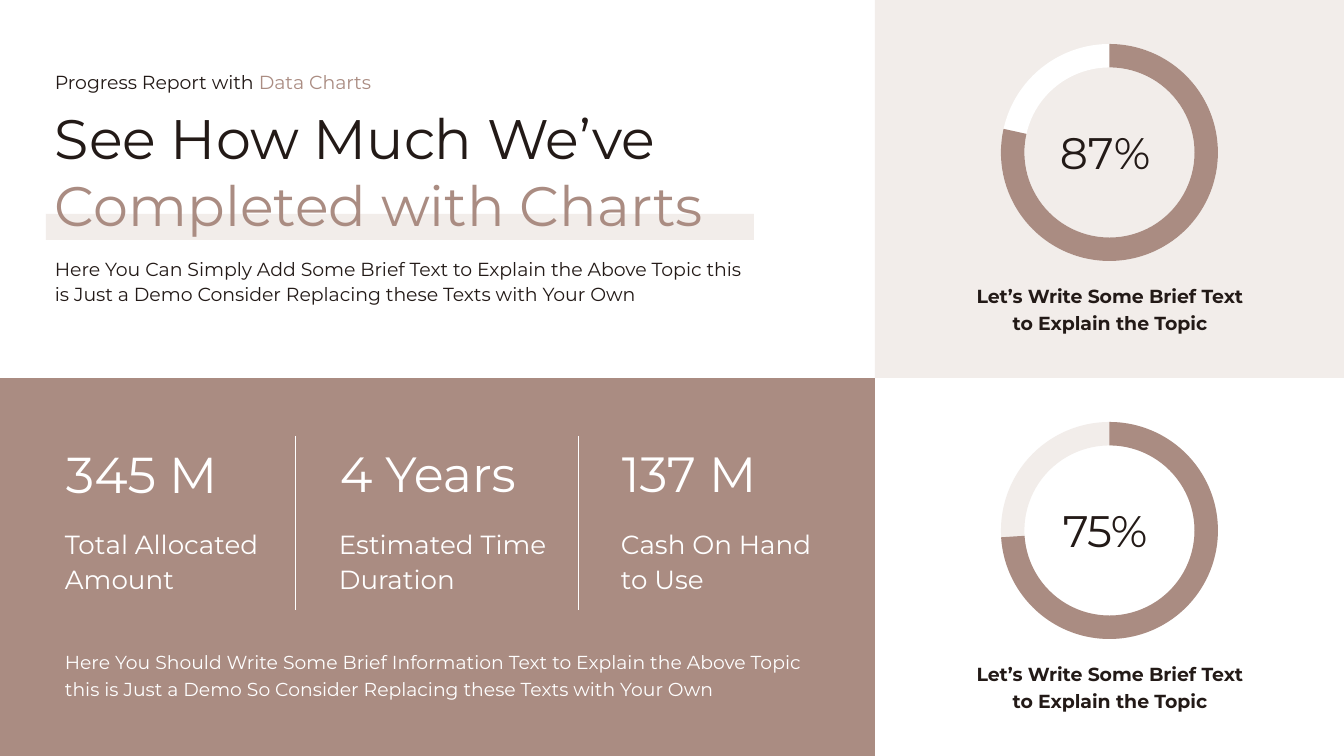
from dataclasses import dataclass

from lxml.etree import SubElement
from pptx import Presentation
from pptx.dml.color import RGBColor
from pptx.enum.shapes import MSO_CONNECTOR, MSO_SHAPE
from pptx.enum.text import MSO_AUTO_SIZE, PP_ALIGN
from pptx.oxml.ns import qn
from pptx.util import Emu, Pt

WIDTH, HEIGHT = 1344, 756
EMU_PER_PX = 12192000 / WIDTH


@dataclass(frozen=True)
class Theme:
    font: str = "Montserrat"
    ink: str = "231A17"
    clay: str = "AA8C82"
    sand: str = "F2EDEA"
    white: str = "FFFFFF"
    title: float = 39.75
    figure: float = 35.25
    lead_figure: float = 36
    percent: float = 31.5
    label: float = 18.75
    body: float = 13.5
    footer: float = 13.4


def px(length):
    return Emu(round(length * EMU_PER_PX))


class SlideBuilder:
    def __init__(self, slide, theme):
        self.shapes = slide.shapes
        self.theme = theme

    def block(self, kind, left, top, width, height, color, parent=None):
        shape = (parent or self.shapes).add_shape(
            kind, px(left), px(top), px(width), px(height))
        shape.shadow.inherit = False
        shape.fill.solid()
        shape.fill.fore_color.rgb = RGBColor.from_string(color)
        shape.line.fill.background()
        return shape

    def panel(self, left, top, width, height, color):
        self.block(MSO_SHAPE.RECTANGLE, left, top, width, height, color)

    def ring(self, left, top, size, end_angle, track_color):
        group = self.shapes.add_group_shape().shapes
        thickness = 0.108
        track = self.block(MSO_SHAPE.DONUT, left, top, size, size, track_color, group)
        track.adjustments[0] = thickness
        progress = self.block(MSO_SHAPE.BLOCK_ARC, left, top, size, size,
                              self.theme.clay, group)
        # Angles are stored in 1/60000 degree, adjustments in 1/100000
        progress.adjustments[0] = 270 * 0.6
        progress.adjustments[1] = end_angle * 0.6
        progress.adjustments[2] = thickness

    def divider(self, x, top, bottom):
        line = self.shapes.add_connector(
            MSO_CONNECTOR.STRAIGHT, px(x), px(top), px(x), px(bottom))
        line.line.color.rgb = RGBColor.from_string(self.theme.white)
        line.line.width = Pt(0.75)
        SubElement(line._element.spPr, qn("a:effectLst"))

    def text(self, left, top, width, height, lines, size, spacing=None,
             align=PP_ALIGN.LEFT, bold=False, tracking=0):
        """Each line is a list of (words, color) runs."""
        frame = self.shapes.add_textbox(
            px(left), px(top), px(width), px(height)).text_frame
        frame.word_wrap = False
        frame.auto_size = MSO_AUTO_SIZE.SHAPE_TO_FIT_TEXT
        for index, runs in enumerate(lines):
            paragraph = frame.add_paragraph() if index else frame.paragraphs[0]
            paragraph.alignment = align
            if spacing:
                paragraph.line_spacing = Pt(spacing)
            for words, color in runs:
                run = paragraph.add_run()
                run.text = words
                run.font.name = self.theme.font
                run.font.size = Pt(size)
                run.font.bold = bold
                run.font.color.rgb = RGBColor.from_string(color)
                if tracking:
                    run._r.get_or_add_rPr().set("spc", str(tracking))


def main():
    deck = Presentation()
    deck.slide_width, deck.slide_height = px(WIDTH), px(HEIGHT)
    theme = Theme()
    page = SlideBuilder(deck.slides.add_slide(deck.slide_layouts[6]), theme)
    half, split = HEIGHT // 2, 875

    # Background panels and title highlight
    page.panel(split, 0, WIDTH - split, half, theme.sand)
    page.panel(0, half, split, half, theme.clay)
    page.panel(46, 214, 708, 26, theme.sand)

    # Heading
    page.text(45, 66, 344, 33, [[("Progress Report with ", theme.ink),
                                 ("Data Charts", theme.clay)]], theme.body)
    page.text(45, 99, 717, 145, [[("See How Much We’ve", theme.ink)],
                                 [("Completed with Charts", theme.clay)]], theme.title)
    intro = ["Here You Can Simply Add Some Brief Text to Explain the Above Topic this",
             "is Just a Demo Consider Replacing these Texts with Your Own"]
    page.text(45, 250, 732, 59, [[(line, theme.ink)] for line in intro],
              theme.body, spacing=18)

    # Progress rings
    caption = ["Let’s Write Some Brief Text", "to Explain the Topic"]
    rings = [("87%", 1050, 118, 192.6, theme.white, 0),
             ("75%", 1053, 113, 176.4, theme.sand, -60)]
    for row, (percent, left, width, end_angle, track, tracking) in enumerate(rings):
        top = row * half
        page.ring(1001, top + 44, 217, end_angle, track)
        page.text(left, top + 120, width, 64, [[(percent, theme.ink)]],
                  theme.percent, tracking=tracking)
        page.text(963, top + 276, 294, 61, [[(line, theme.ink)] for line in caption],
                  theme.body, spacing=19, align=PP_ALIGN.CENTER, bold=True)

    # Key figures
    figures = [
        (55, "345 M", theme.lead_figure, 181, ["Total Allocated", "Amount"], 223),
        (329, "4 Years", theme.figure, 217, ["Estimated Time", "Duration"], 231),
        (611, "137 M", theme.figure, 164, ["Cash On Hand", "to Use"], 211),
    ]
    for left, figure, size, figure_width, label, label_width in figures:
        page.text(left + 1, 438, figure_width, 70, [[(figure, theme.white)]], size)
        page.text(left, 520, label_width, 74, [[(line, theme.white)] for line in label],
                  theme.label, spacing=25)
    for x in (296, 579):
        page.divider(x, 436, 610)

    # Footer note
    note = ["Here You Should Write Some Brief Information Text to Explain the Above Topic",
            "this is Just a Demo So Consider Replacing these Texts with Your Own"]
    page.text(55, 642, 799, 61, [[(line, theme.white)] for line in note],
              theme.footer, spacing=19)

    deck.save("out.pptx")


if __name__ == "__main__":
    main()
